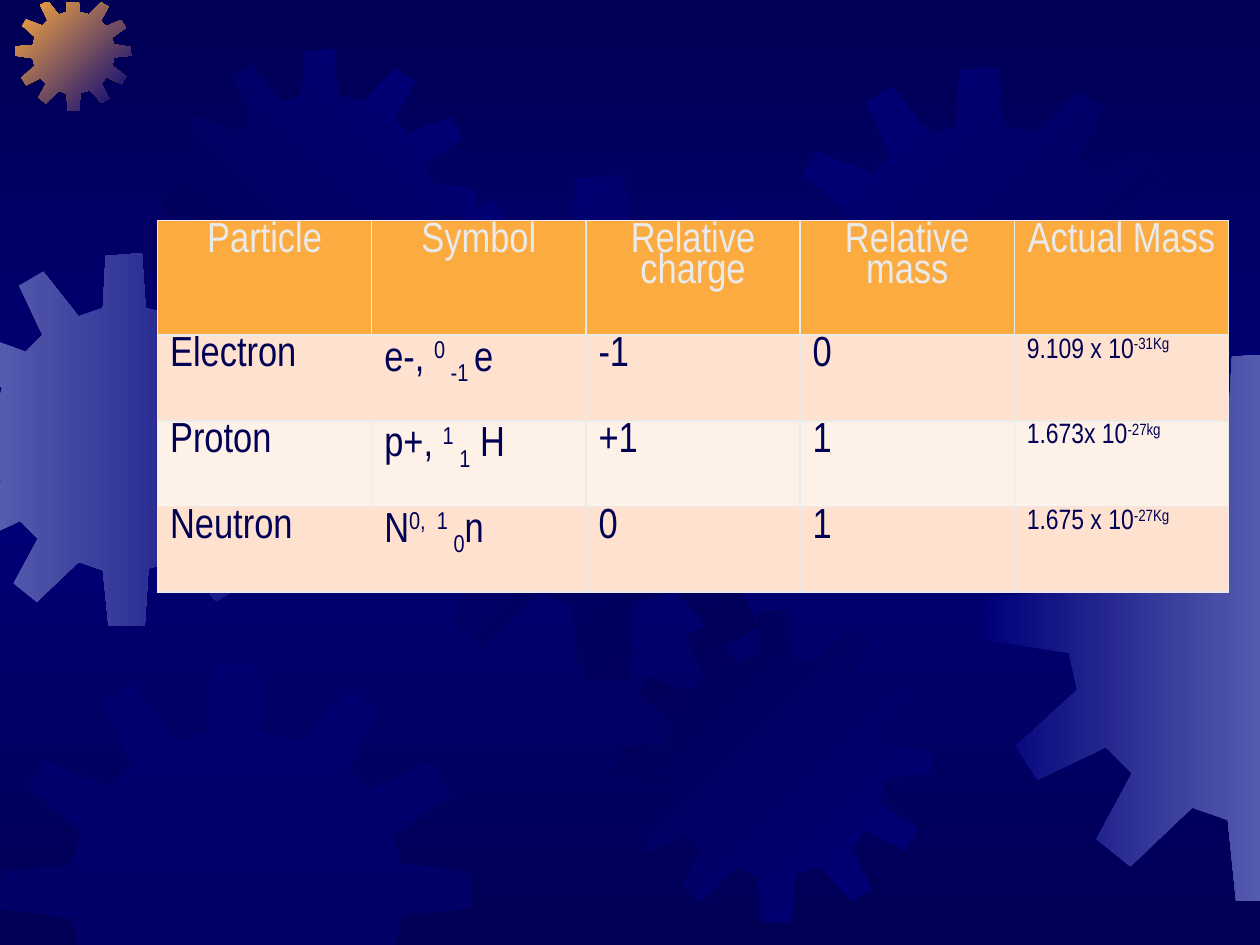
from copy import deepcopy

from lxml.etree import SubElement
from pptx import Presentation
from pptx.dml.color import RGBColor
from pptx.enum.text import PP_ALIGN
from pptx.oxml.ns import qn
from pptx.util import Inches, Pt

NAVY = RGBColor(0x00, 0x00, 0x54)
BLUE = RGBColor(0x00, 0x00, 0x7A)
PERIWINKLE = RGBColor(0x55, 0x5B, 0xAD)
ORANGE = RGBColor(0xFC, 0xAB, 0x40)
PEACH = RGBColor(0xFE, 0xE2, 0xCF)
CREAM = RGBColor(0xFE, 0xF1, 0xE8)
PALE_GRAY = RGBColor(0xEA, 0xEA, 0xEA)

# Outline of one gear in a square of GEAR_UNITS
GEAR_UNITS = 401
GEAR = [
    (255, 67), (223, 59), (219, 0), (180, 3), (177, 59), (151, 68), (113, 20), (87, 35),
    (112, 88), (94, 106), (38, 85), (25, 107), (68, 145), (61, 174), (1, 178), (0, 210),
    (61, 219), (67, 246), (22, 287), (38, 312), (88, 288), (107, 307), (81, 355), (106, 375),
    (151, 332), (177, 341), (183, 400), (222, 401), (226, 339), (259, 330), (299, 374), (325, 358),
    (299, 306), (316, 284), (368, 309), (384, 281), (336, 246), (342, 216), (401, 210), (400, 180),
    (341, 171), (335, 148), (383, 114), (367, 87), (313, 109), (296, 91), (323, 41), (297, 25),
]
# Axis, limit and the side to keep (1 above the limit, -1 below it)
EDGES = [(0, -0.01, 1), (0, 10.01, -1), (1, 0.02, 1), (1, 7.54, -1)]


def clip(points, axis, limit, side):
    """Cut a closed polygon along one straight edge of the slide."""
    kept = []
    for start, end in zip(points[-1:] + points[:-1], points):
        start_gap = (start[axis] - limit) * side
        end_gap = (end[axis] - limit) * side
        if start_gap * end_gap < 0:
            share = start_gap / (start_gap - end_gap)
            kept.append(tuple(a + (b - a) * share for a, b in zip(start, end)))
        if end_gap >= 0:
            kept.append(end)
    return kept


def set_gradient(fill, first, last, clockwise_angle):
    fill.gradient()
    fill.gradient_angle = -clockwise_angle % 360
    for stop, color, position in zip(fill.gradient_stops, (first, last), (0, 1)):
        stop.color.rgb = color
        stop.position = position


presentation = Presentation()
presentation.slide_width = Inches(10)
presentation.slide_height = Inches(7.5)
slide = presentation.slides.add_slide(presentation.slide_layouts[6])

# Background: navy at top and bottom, blue in the middle
background = slide.background.fill
set_gradient(background, NAVY, BLUE, 90)
background.gradient_stops[1].position = 0.5
stop_list = slide.element.find(".//" + qn("a:gsLst"))
last_stop = deepcopy(stop_list[0])
last_stop.set("pos", "100000")
stop_list.append(last_stop)

# Gears: left, top, size, first colour, last colour, angle (None for a plain fill)
gears = [
    (-0.49, 2.01, 2.96, PERIWINKLE, BLUE, 0),
    (0.12, -0.04, 0.92, ORANGE, BLUE, 45),
    (1.3, 0.39, 2.48, NAVY, BLUE, 315),
    (2.77, 1.39, 4.01, BLUE, NAVY, 45),
    (0, 5.25, 3.74, BLUE, BLUE, None),
    (4.91, 4.84, 2.48, NAVY, BLUE, 45),
    (6.18, 0.53, 3.2, BLUE, NAVY, 45),
    (7.82, 2.8, 4.36, BLUE, PERIWINKLE, 0),
]
for left, top, size, first, last, angle in gears:
    scale = size / GEAR_UNITS
    points = [(left + x * scale, top + y * scale) for x, y in GEAR]
    for edge in EDGES:
        points = clip(points, *edge)
    corners = [(Inches(x), Inches(y)) for x, y in points]
    builder = slide.shapes.build_freeform(*corners[0])
    builder.add_line_segments(corners[1:], close=True)
    gear = builder.convert_to_shape()
    gear.shadow.inherit = False
    gear.line.fill.background()
    if angle is None:
        gear.fill.solid()
        gear.fill.fore_color.rgb = first
        color = gear.element.spPr.find(".//" + qn("a:srgbClr"))
        SubElement(color, qn("a:alpha"), val="50000")
    else:
        set_gradient(gear.fill, first, last, angle)

# Particle table: each cell is a list of (text, baseline shift in percent)
SUPER, SUB = 30, -25
headings = ["Particle", "Symbol", "Relative charge", "Relative mass", "Actual Mass"]
rows = [
    [[(heading, 0)] for heading in headings],
    [[("Electron", 0)], [("e-, ", 0), ("0 ", SUPER), ("-1 ", SUB), ("e", 0)],
     [("-1", 0)], [("0", 0)], [("9.109 x 10", 0), ("-31Kg", SUPER)]],
    [[("Proton", 0)], [("p+, ", 0), ("1 ", SUPER), ("1", SUB), (" H", 0)],
     [("+1", 0)], [("1", 0)], [("1.673x 10", 0), ("-27kg", SUPER)]],
    [[("Neutron", 0)], [("N", 0), ("0,  1 ", SUPER), ("0", SUB), ("n", 0)],
     [("0", 0)], [("1", 0)], [("1.675 x 10", 0), ("-27Kg", SUPER)]],
]
row_heights = [0.91, 0.68, 0.68, 0.68]
row_fills = [ORANGE, PEACH, CREAM, PEACH]

table = slide.shapes.add_table(
    len(rows), len(headings), Inches(1.25), Inches(1.75), Inches(8.5), Inches(sum(row_heights))
).table
for column in table.columns:
    column.width = Inches(1.7)

for row_index, row in enumerate(rows):
    is_header = row_index == 0
    table.rows[row_index].height = Inches(row_heights[row_index])
    for column_index, runs in enumerate(row):
        cell = table.cell(row_index, column_index)
        properties = cell._tc.get_or_add_tcPr()
        for side in ("lnL", "lnR", "lnT", "lnB"):
            border = SubElement(properties, qn(f"a:{side}"), w=str(Pt(1)))
            border_fill = SubElement(border, qn("a:solidFill"))
            SubElement(border_fill, qn("a:srgbClr"), val=str(PALE_GRAY))
        cell.fill.solid()
        cell.fill.fore_color.rgb = row_fills[row_index]

        paragraph = cell.text_frame.paragraphs[0]
        paragraph.line_spacing = 0.8
        paragraph.alignment = PP_ALIGN.CENTER if is_header else PP_ALIGN.LEFT
        is_actual_mass = not is_header and column_index == len(headings) - 1
        paragraph.font.name = "Arial Narrow"
        paragraph.font.size = Pt(16 if is_actual_mass else 24)
        paragraph.font.bold = False
        paragraph.font.color.rgb = PALE_GRAY if is_header else NAVY
        for text, baseline in runs:
            run = paragraph.add_run()
            run.text = text
            if baseline:
                run.font._element.set("baseline", str(baseline * 1000))

presentation.save("out.pptx")
